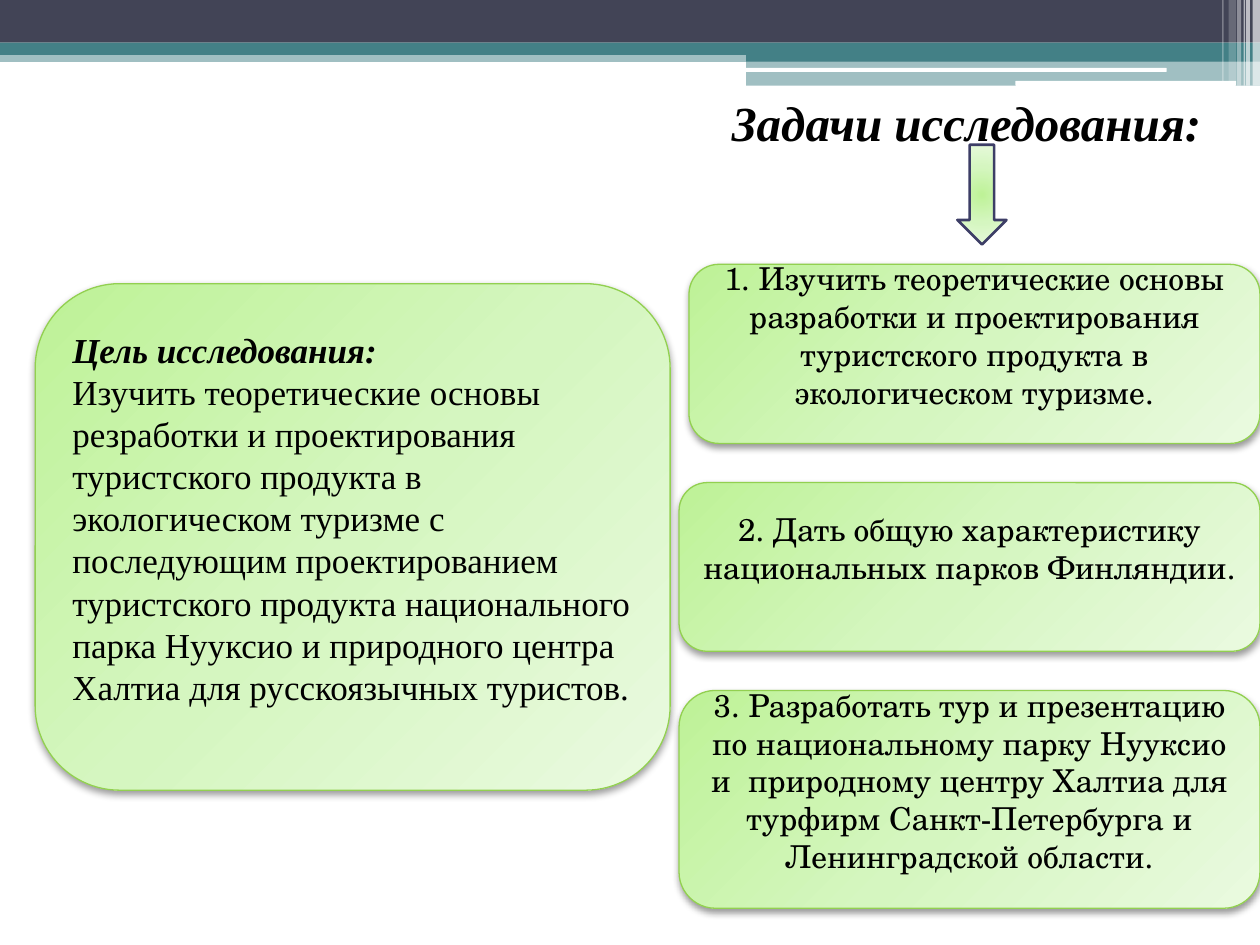
"""Build a slide that sets out the goal and the tasks of a study."""
from dataclasses import dataclass

from lxml import etree
from pptx import Presentation
from pptx import util as u
from pptx.dml import color
from pptx.enum import shapes, text
from pptx.oxml import ns

SERIF, SCHOOL = "Times New Roman", "TeX Gyre Schola"
NAVY, TEAL, WHITE, BLACK, GREEN, INDIGO = "424456", "438086", "FFFFFF", "000000", "92D050", "3D3E66"
GRADIENT = ((0, "BEF297"), (50, "D5F6C0"), (100, "EAFAE0"))
DIAGONAL = {"lin": {"ang": "2700000", "scaled": "0"}}
RECT, ROUND = shapes.MSO_SHAPE.RECTANGLE, shapes.MSO_SHAPE.ROUNDED_RECTANGLE


@dataclass
class Area:
    """Position and size in centimetres."""
    left: float
    top: float
    width: float
    height: float

    def lengths(self) -> list:
        """Return the four values as lengths."""
        return [u.Cm(value) for value in (self.left, self.top, self.width, self.height)]


@dataclass
class Band:
    """Plain strip of the header; opacity is in percent."""
    area: Area
    fill: str
    opacity: int = 100
    kind: int = RECT


@dataclass
class Card:
    """Rounded panel with one block of text."""
    area: Area
    body: str
    heading: str = ""
    font: str = SCHOOL
    size: int = 18
    align: int = text.PP_ALIGN.CENTER


BANDS = [
    Band(Area(0, 1.02, 25.4, 0.23), TEAL, 50),
    Band(Area(0, 0, 25.4, 0.86), NAVY),
    Band(Area(0, 0.86, 25.4, 0.25), TEAL),
    Band(Area(15.04, 0.99, 10.36, 0.25), TEAL),
    Band(Area(15.04, 1.22, 10.36, 0.51), TEAL, 50),
    Band(Area(15.01, 1.37, 8.51, 0.08), WHITE, kind=ROUND),
    Band(Area(20.47, 1.63, 4.45, 0.1), WHITE, kind=ROUND),
] + [
    Band(Area(left, 0, width, height), WHITE, opacity)
    for left, width, height, opacity in (
        (25.25, 0.15, 1.73, 65), (25.12, 0.08, 1.73, 65), (25.07, 0.03, 1.73, 60),
        (24.94, 0.08, 1.73, 40), (24.77, 0.15, 1.63, 20), (24.64, 0.03, 1.63, 30))
]

CARDS = [
    Card(Area(0.71, 5.72, 12.8, 10.21),
         "Изучить теоретические основы резработки и проектирования туристского продукта "
         "в экологическом туризме с последующим проектированием туристского продукта "
         "национального парка Нууксио и природного центра Халтиа для русскоязычных туристов.",
         "Цель исследования:", SERIF, 20, text.PP_ALIGN.LEFT),
    Card(Area(13.69, 9.73, 11.71, 3.4),
         "2. Дать общую характеристику национальных парков Финляндии."),
    Card(Area(13.69, 13.92, 11.71, 4.39),
         "3. Разработать тур и презентацию по национальному парку Нууксио и  природному "
         "центру Халтиа для турфирм Санкт-Петербурга и Ленинградской области."),
    Card(Area(13.89, 5.33, 11.51, 3.61),
         "1. Изучить теоретические основы разработки и проектирования туристского продукта "
         "в экологическом туризме."),
]


def rgb(value: str) -> color.RGBColor:
    """Turn a hex string into a colour."""
    return color.RGBColor.from_string(value)


def add_node(parent, tag: str, **attributes: str):
    """Append a DrawingML element and return it."""
    return etree.SubElement(parent, ns.qn(f"a:{tag}"), attributes)


def write(para, words: str, *, font: str, size: int, bold: bool = False, italic: bool = False,
          align: int = text.PP_ALIGN.LEFT) -> None:
    """Put formatted text into a paragraph."""
    para.alignment = align
    span = para.add_run()
    span.text = words
    span.font.name, span.font.size = font, u.Pt(size)
    span.font.bold, span.font.italic = bold, italic
    span.font.color.rgb = rgb(BLACK)


def add_box(page, kind: int, area: Area):
    """Add a preset shape without a shadow."""
    box = page.shapes.add_shape(kind, *area.lengths())
    box.shadow.inherit = False
    return box


def add_band(page, band: Band) -> None:
    """Draw one strip of the header."""
    box = add_box(page, band.kind, band.area)
    box.fill.solid()
    box.fill.fore_color.rgb = rgb(band.fill)
    box.line.fill.background()
    if band.opacity < 100:
        shade = box._element.spPr.find(".//" + ns.qn("a:srgbClr"))
        add_node(shade, "alpha", val=str(band.opacity * 1000))


def paint(box, line: str, width: float, direction: dict) -> None:
    """Give a shape the green gradient and an outline."""
    box.fill.background()
    properties = box._element.spPr
    gradient = etree.Element(ns.qn("a:gradFill"), rotWithShape="1")
    stops = add_node(gradient, "gsLst")
    for position, value in GRADIENT:
        add_node(add_node(stops, "gs", pos=str(position * 1000)), "srgbClr", val=value)
    for tag, attributes in direction.items():
        add_node(gradient, tag, **attributes)
    properties.replace(properties.find(ns.qn("a:noFill")), gradient)
    box.line.color.rgb = rgb(line)
    box.line.width = u.Pt(width)


def add_card(page, card: Card) -> None:
    """Draw one panel with its shadow and text."""
    box = add_box(page, ROUND, card.area)
    paint(box, GREEN, 0.75, DIAGONAL)
    effects = box._element.spPr.find(ns.qn("a:effectLst"))
    shadow = add_node(effects, "outerShdw", blurRad=str(u.Pt(4.1)), dist=str(u.Pt(2)),
                      dir="5400000", rotWithShape="0")
    add_node(add_node(shadow, "srgbClr", val=BLACK), "alpha", val="40000")
    frame = box.text_frame
    frame.word_wrap = True
    frame.vertical_anchor = text.MSO_ANCHOR.MIDDLE
    frame.margin_bottom = u.Cm(0.89)
    para = frame.paragraphs[0]
    style = {"font": card.font, "size": card.size, "align": card.align}
    if card.heading:
        write(para, card.heading, bold=True, italic=True, **style)
        para = frame.add_paragraph()
    write(para, card.body, **style)


def add_title(page) -> None:
    """Place and format the title."""
    title = page.shapes.title
    title.left, title.top, title.width, title.height = Area(14.5, 1.73, 9.98, 1.45).lengths()
    frame = title.text_frame
    frame.word_wrap = False
    frame.auto_size = text.MSO_AUTO_SIZE.SHAPE_TO_FIT_TEXT
    frame.vertical_anchor = text.MSO_ANCHOR.TOP
    write(frame.paragraphs[0], "Задачи исследования:", font=SERIF, size=28, bold=True, italic=True)


def add_arrow(page) -> None:
    """Draw the arrow from the title to the tasks."""
    arrow = add_box(page, shapes.MSO_SHAPE.DOWN_ARROW, Area(19.3, 2.92, 0.99, 2.01))
    paint(arrow, INDIGO, 1.5, {"path": {"path": "circle"}})
    circle = arrow._element.spPr.find(".//" + ns.qn("a:path"))
    add_node(circle, "fillToRect", l="50000", t="50000", r="50000", b="50000")


def main() -> None:
    """Assemble and save the deck."""
    deck = Presentation()
    deck.slide_width, deck.slide_height = u.Cm(25.4), u.Cm(19.05)
    page = deck.slides.add_slide(deck.slide_layouts[5])
    for band in BANDS:
        add_band(page, band)
    for card in CARDS:
        add_card(page, card)
    add_title(page)
    add_arrow(page)
    deck.save("out.pptx")


if __name__ == "__main__":
    main()
